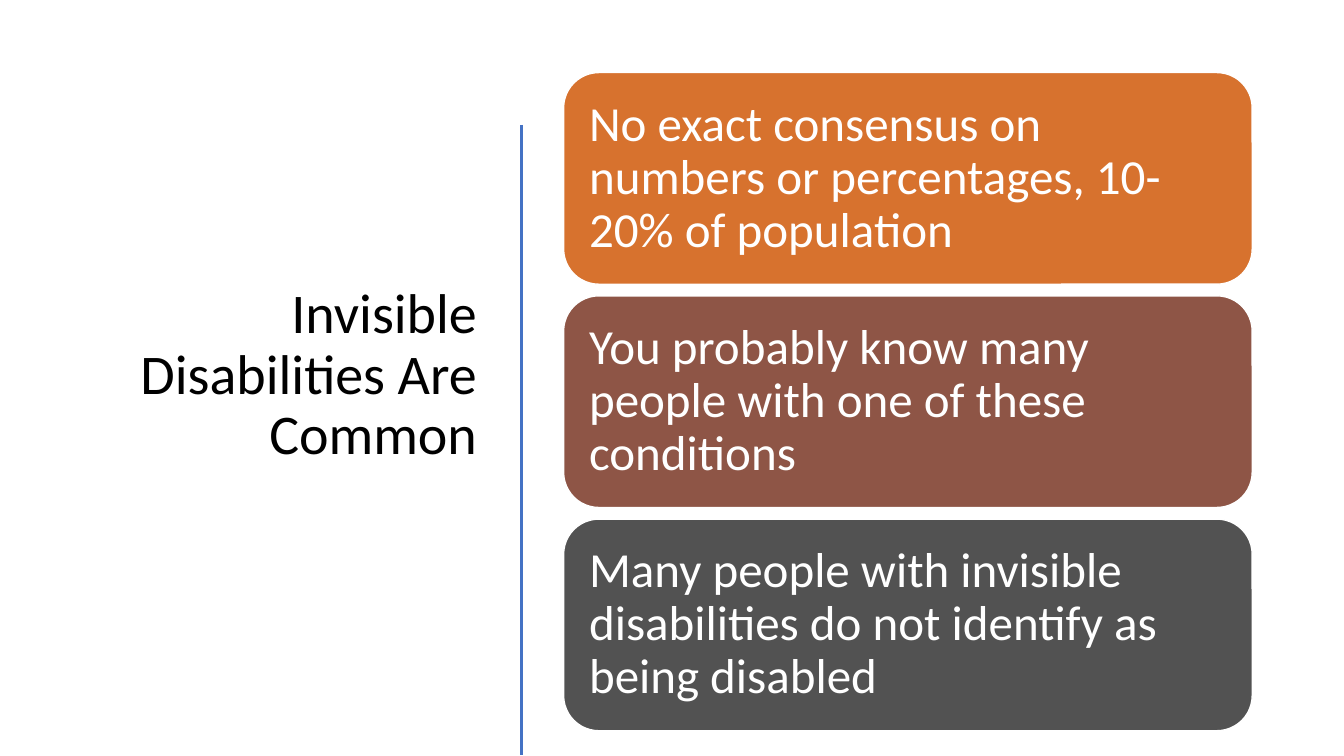
from lxml.etree import SubElement
from pptx import Presentation
from pptx.dml.color import RGBColor
from pptx.enum.shapes import MSO_CONNECTOR as Connector, MSO_SHAPE as Shape
from pptx.enum.text import MSO_ANCHOR as Anchor, MSO_AUTO_SIZE as AutoSize, PP_ALIGN as Align
from pptx.oxml.ns import qn
from pptx.util import Inches, Pt

SLIDE_WIDTH, SLIDE_HEIGHT = 13.33, 7.5
TITLE_ONLY = 5
FONT = "Calibri"
WHITE, BLACK, BLUE = "FFFFFF", "000000", "4472C4"

# Regions: left, top, width, height in inches
TITLE_BOX = (0.52, 0.18, 4.31, 7.1)
DIVIDER_BOX = (5.17, 1.24, 0, 6.25)
CARDS_BOX = (5.59, 0.72, 6.83, 6.53)

CARD_HEIGHT = 2.1
CARD_INSET = 0.15
CARDS = [
    ("D7722E", "No exact consensus on numbers or percentages, 10-20% of population"),
    ("8E5546", "You probably know many people with one of these conditions"),
    ("525252", "Many people with invisible disabilities do not identify as being disabled"),
]


def color(hex_string):
    return RGBColor.from_string(hex_string)


def write(frame, text, size, hex_string, align):
    """Fill a text frame with one vertically centred paragraph."""
    frame.word_wrap = True
    frame.auto_size = AutoSize.NONE
    frame.vertical_anchor = Anchor.MIDDLE
    para = frame.paragraphs[0]
    para.text = text
    para.alignment = align
    para.line_spacing = 0.9
    para.font.name = FONT
    para.font.size = Pt(size)
    para.font.color.rgb = color(hex_string)


def add_title(page, box):
    title = page.shapes.title
    title.left, title.top, title.width, title.height = map(Inches, box)
    write(title.text_frame, "Invisible Disabilities Are Common", 40, BLACK, Align.RIGHT)


def add_divider(page, box):
    left, top, width, height = box
    ends = map(Inches, (left, top, left + width, top + height))
    divider = page.shapes.add_connector(Connector.STRAIGHT, *ends)
    divider.line.color.rgb = color(BLUE)
    divider.line.width = Pt(2)
    # An empty effect list removes the theme shadow
    SubElement(divider.element.spPr, qn("a:effectLst"))


def add_card(page, box, fill, text):
    card = page.shapes.add_shape(Shape.ROUNDED_RECTANGLE, *map(Inches, box))
    card.shadow.inherit = False
    card.fill.solid()
    card.fill.fore_color.rgb = color(fill)
    card.line.color.rgb = color(WHITE)
    card.line.width = Pt(1)
    frame = card.text_frame
    frame.margin_left = frame.margin_right = Inches(CARD_INSET)
    frame.margin_top = frame.margin_bottom = Inches(CARD_INSET)
    write(frame, text, 35, WHITE, Align.LEFT)


def add_cards(page, box):
    """Stack the cards evenly from the top to the bottom of the box."""
    left, top, width, height = box
    step = (height - CARD_HEIGHT) / (len(CARDS) - 1)
    for row, (fill, text) in enumerate(CARDS):
        add_card(page, (left, top + row * step, width, CARD_HEIGHT), fill, text)


def main():
    deck = Presentation()
    deck.slide_width, deck.slide_height = Inches(SLIDE_WIDTH), Inches(SLIDE_HEIGHT)
    page = deck.slides.add_slide(deck.slide_layouts[TITLE_ONLY])
    add_title(page, TITLE_BOX)
    add_divider(page, DIVIDER_BOX)
    add_cards(page, CARDS_BOX)
    deck.save("out.pptx")


if __name__ == "__main__":
    main()
